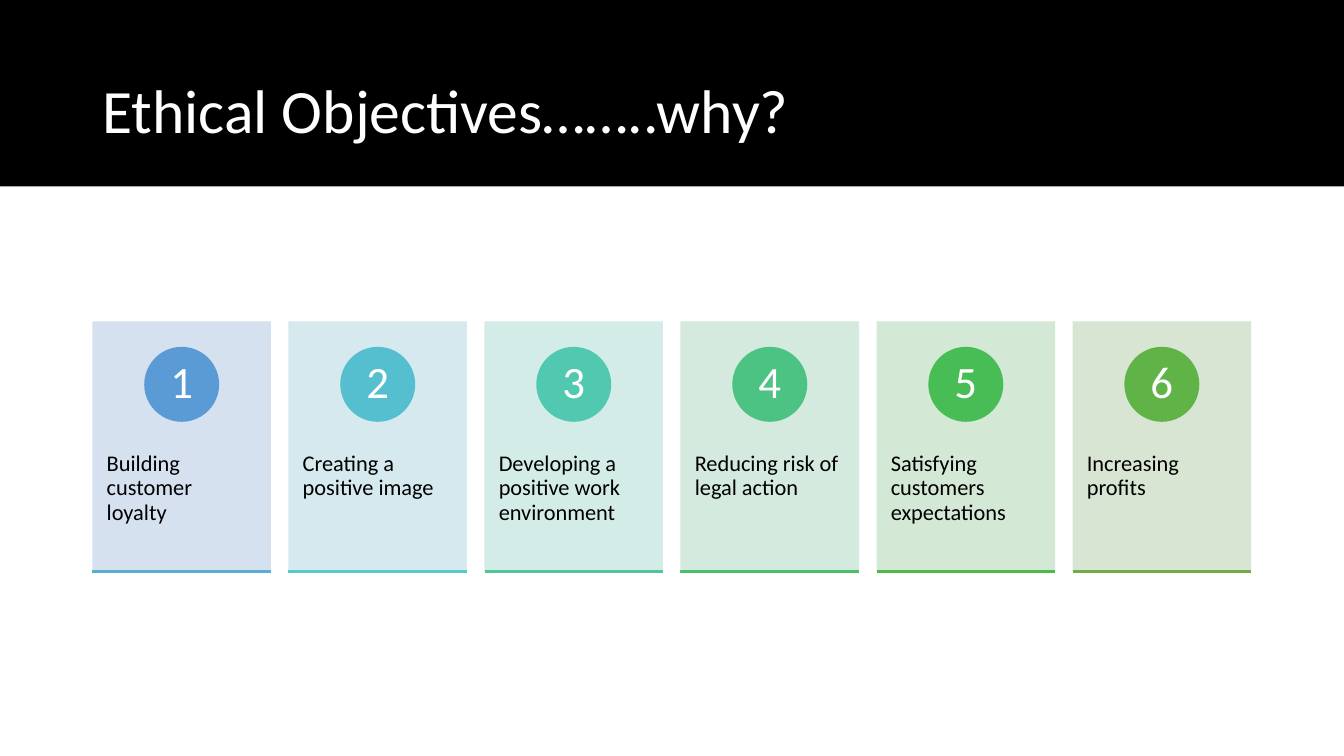
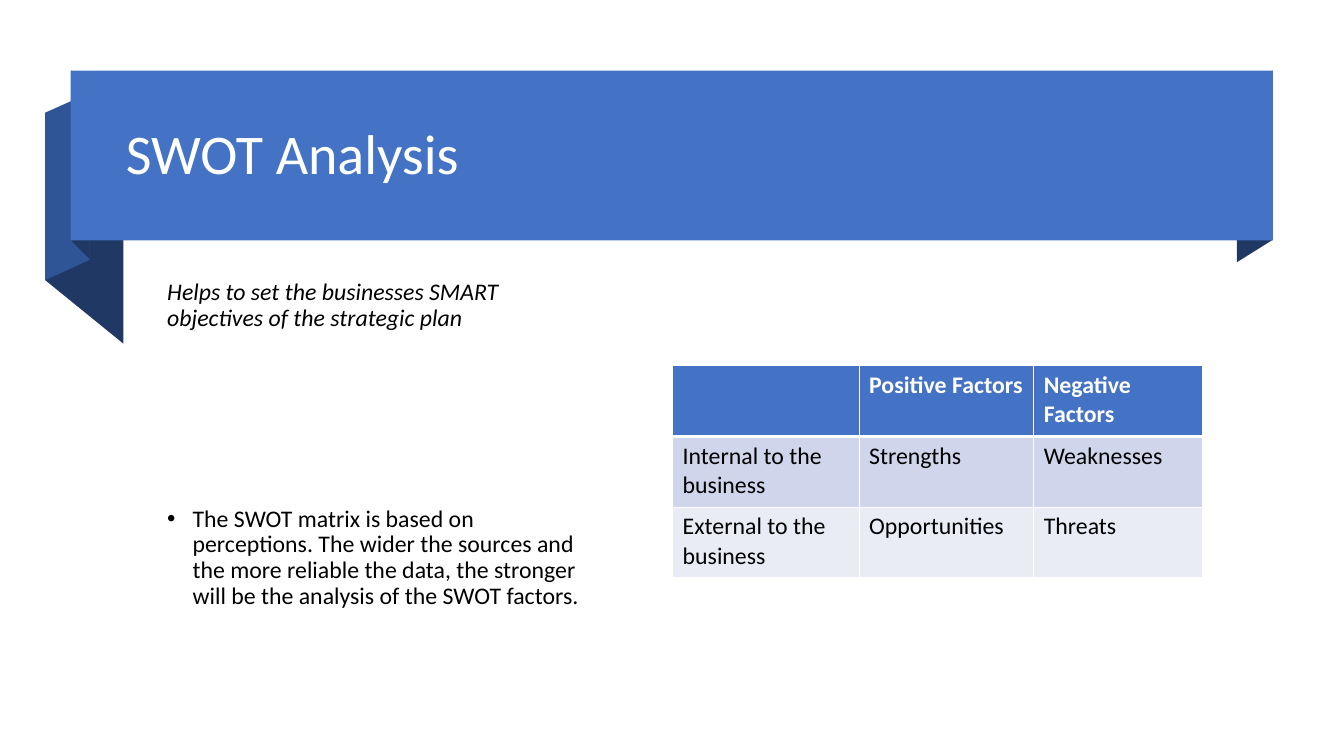
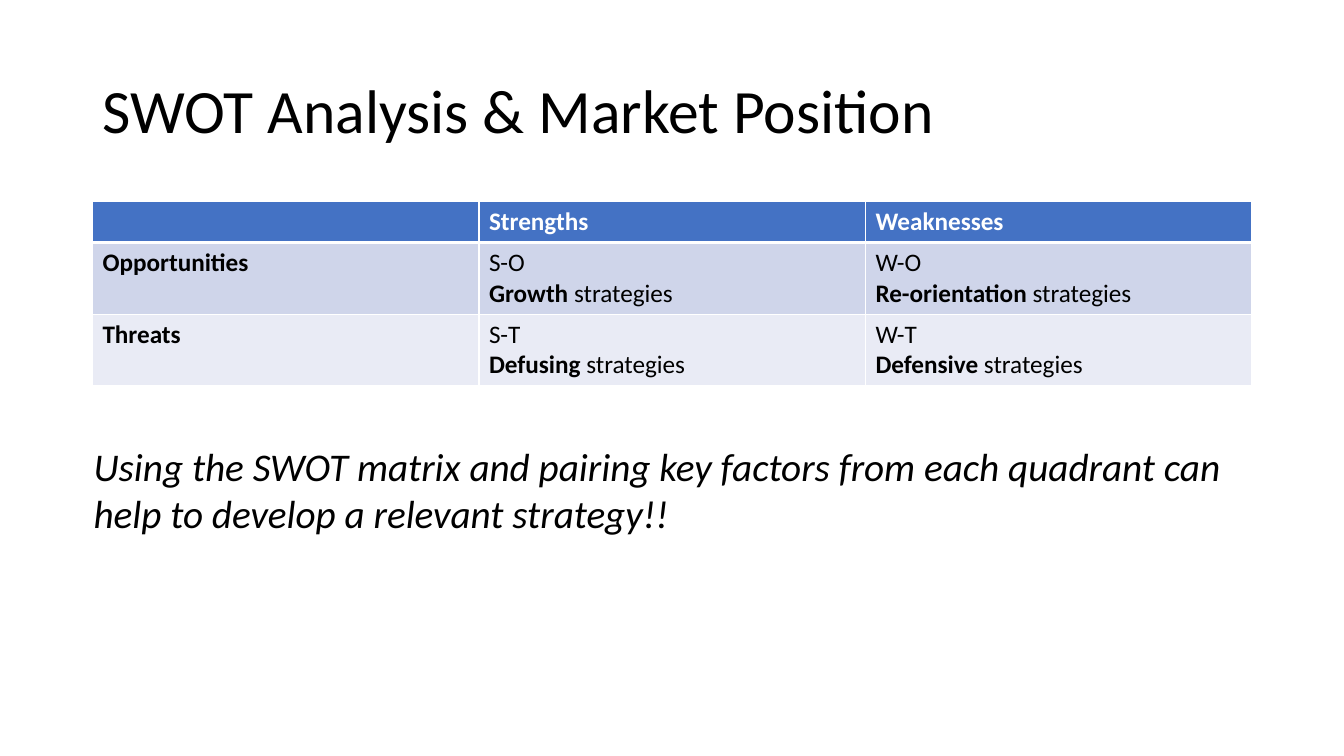
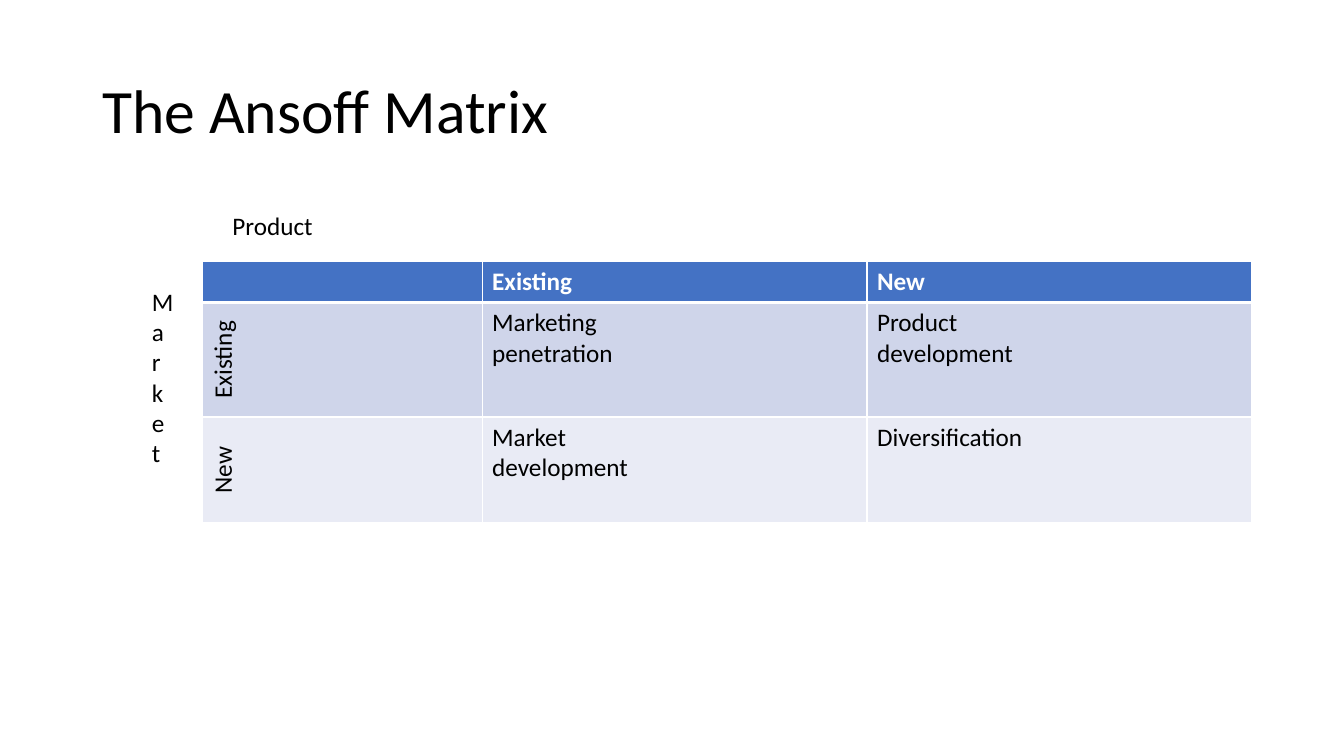
from pptx import Presentation
from pptx.dml.color import RGBColor
from pptx.enum.shapes import MSO_CONNECTOR, MSO_SHAPE
from pptx.enum.text import MSO_ANCHOR, MSO_AUTO_SIZE, PP_ALIGN
from pptx.oxml.ns import qn
from pptx.util import Cm, Pt
from lxml import etree

RECT, OVAL = MSO_SHAPE.RECTANGLE, MSO_SHAPE.OVAL
LINE = MSO_CONNECTOR.STRAIGHT
TOP, MIDDLE = MSO_ANCHOR.TOP, MSO_ANCHOR.MIDDLE
LEFT, CENTER = PP_ALIGN.LEFT, PP_ALIGN.CENTER
FIXED = MSO_AUTO_SIZE.NONE

BLACK = RGBColor(0x00, 0x00, 0x00)
WHITE = RGBColor(0xFF, 0xFF, 0xFF)
BLUE = RGBColor(0x44, 0x72, 0xC4)
NAVY = RGBColor(0x20, 0x38, 0x64)
STEEL = RGBColor(0x2F, 0x55, 0x97)
BANDS = [BLUE, RGBColor(0xCF, 0xD5, 0xEA), RGBColor(0xE9, 0xEB, 0xF5)]


def write(frame, text, size, color=BLACK, align=LEFT, anchor=TOP, gap=1.0, **extra):
    """Fill a text frame: a line break starts a paragraph, *stars* make bold."""
    frame.word_wrap = True
    frame.vertical_anchor = anchor
    for row, line in enumerate(text.split("\n")):
        par = frame.add_paragraph() if row else frame.paragraphs[0]
        par.alignment, par.line_spacing = align, gap
        for part, words in enumerate(line.split("*")):
            if not words:
                continue
            run = par.add_run()
            run.text = words
            form = {"name": "Calibri", "size": Pt(size), "bold": part % 2 == 1, **extra}
            for key, value in form.items():
                setattr(run.font, key, value)
            run.font.color.rgb = color


def paint(shape, color):
    shape.shadow.inherit = False
    shape.fill.solid()
    shape.fill.fore_color.rgb = color
    shape.line.fill.background()


deck = Presentation()
deck.slide_width, deck.slide_height = Cm(33.87), Cm(19.05)

# Pages and their titles
WIDE = (2.33, 1.01, 29.21, 3.68)
heads = [
    (5, "Ethical Objectives……..why?", WIDE, 44, WHITE),
    (1, "SWOT Analysis", (2.92, 2.11, 28.63, 3.68), 40, WHITE),
    (5, "SWOT Analysis & Market Position", WIDE, 44, BLACK),
    (5, "The Ansoff Matrix", WIDE, 44, BLACK),
]
pages = []
for layout, text, spot, size, color in heads:
    page = deck.slides.add_slide(deck.slide_layouts[layout])
    title = page.shapes.title
    title.left, title.top, title.width, title.height = map(Cm, spot)
    title.text_frame.auto_size = FIXED
    write(title.text_frame, text, size, color, anchor=MIDDLE, gap=0.9)
    pages.append(page)
ethics, swot, market, ansoff = pages

# Ethical objectives: black band and numbered cards
band = ethics.shapes.add_shape(RECT, 0, 0, deck.slide_width, Cm(4.7))
paint(band, BLACK)
ethics.shapes._spTree.append(ethics.shapes.title._element)

cards = [
    ("Building customer loyalty", "D2DEEF", "5B9BD5", "58ADD2"),
    ("Creating a positive image", "D1E7ED", "56BFCF", "53CCC8"),
    ("Developing a positive work environment", "D0EBE6", "51C9B0", "4FC699"),
    ("Reducing risk of legal action", "D0E8DB", "4CC382", "4AC06B"),
    ("Satisfying customers expectations", "CFE6D1", "48BC55", "4DB946"),
    ("Increasing profits", "D5E3CF", "60B347", "70AD47"),
]
WIDTH, STEP, HIGH, LOW, DISC = 4.5, 4.94, 8.1, 14.4, 1.89
for index, (text, *tones) in enumerate(cards):
    pale, full, edge = map(RGBColor.from_string, tones)
    left = WIDE[0] + index * STEP
    card = ethics.shapes.add_shape(RECT, Cm(left), Cm(HIGH), Cm(WIDTH), Cm(LOW - HIGH))
    paint(card, pale)
    tint = card._element.spPr.find(qn("a:solidFill"))[0]
    etree.SubElement(tint, qn("a:alpha"), val="90000")
    frame = card.text_frame
    frame.margin_left = frame.margin_right = Cm(0.36)
    frame.margin_top = Cm(3.3)
    write(frame, text, 16, gap=0.9)

    disc = ethics.shapes.add_shape(
        OVAL, Cm(left + (WIDTH - DISC) / 2), Cm(8.74), Cm(DISC), Cm(DISC))
    paint(disc, full)
    frame = disc.text_frame
    frame.margin_left = frame.margin_right = frame.margin_top = frame.margin_bottom = 0
    write(frame, str(index + 1), 32, WHITE, CENTER, MIDDLE, 0.9)

    rule = ethics.shapes.add_connector(LINE, Cm(left), Cm(LOW), Cm(left + WIDTH), Cm(LOW))
    rule.line.color.rgb = edge
    rule.line.width = Pt(1.5)
    etree.SubElement(rule._element.spPr, qn("a:effectLst"))

# SWOT analysis: folded ribbon
folds = [
    (NAVY, [(32.08, 6.04), (31.17, 6.61), (31.17, 2.31), (32.08, 1.78)]),
    (NAVY, [(3.11, 8.66), (1.14, 7.06), (1.14, 2.84), (3.11, 4.44)]),
    (STEEL, [(2.26, 6.55), (1.14, 7.06), (1.14, 2.84), (2.26, 2.34)]),
    (NAVY, [(2.26, 6.53), (1.8, 6.07), (1.8, 1.78), (2.26, 2.26)]),
]
for color, points in folds:
    start, *rest = [(Cm(x), Cm(y)) for x, y in points]
    pen = swot.shapes.build_freeform(*start)
    pen.add_line_segments(rest, close=True)
    paint(pen.convert_to_shape(), color)
front = swot.shapes.add_shape(RECT, Cm(1.78), Cm(1.78), Cm(30.3), Cm(4.28))
paint(front, BLUE)
swot.shapes._spTree.append(swot.shapes.title._element)

body = swot.placeholders[1]
body.left, body.top, body.width, body.height = Cm(3.96), Cm(6.93), Cm(11.25), Cm(9.9)
body.text_frame.auto_size = FIXED
write(body.text_frame,
      "Helps to set the businesses SMART objectives of the strategic plan\n"
      "The SWOT matrix is based on perceptions. The wider the sources and the more "
      "reliable the data, the stronger will be the analysis of the SWOT factors.",
      17, gap=0.9)
lead, point = body.text_frame.paragraphs
lead.runs[0].font.italic = True
lead.space_before, point.space_before = Pt(0), Pt(125)
for par, indent, bullet in ((lead, 0, "a:buNone"), (point, Cm(0.64), "a:buChar")):
    props = par._p.get_or_add_pPr()
    props.set("marL", str(indent))
    props.set("indent", str(-indent))
    mark = etree.SubElement(props, qn(bullet))
    if indent:
        mark.set("char", "•")

# Tables: page, left and top, columns, rows, text size, cells
tables = [
    (swot, (16.95, 9.22), (4.7, 4.4, 4.27), (1.78, 1.78, 1.78), 17, [
        ["", "*Positive Factors*", "*Negative Factors*"],
        ["Internal to the business", "Strengths", "Weaknesses"],
        ["External to the business", "Opportunities", "Threats"]]),
    (market, (2.33, 5.08), (9.74, 9.74, 9.74), (1.03, 1.8, 1.8), 18, [
        ["", "*Strengths*", "*Weaknesses*"],
        ["*Opportunities*", "S-O\n*Growth* strategies", "W-O\n*Re-orientation* strategies"],
        ["*Threats*", "S-T\n*Defusing* strategies", "W-T\n*Defensive* strategies"]]),
    (ansoff, (5.11, 6.59), (7.04, 9.7, 9.7), (1.03, 2.89, 2.66), 18, [
        ["", "*Existing*", "*New*"],
        ["Existing", "Marketing\npenetration", "Product\ndevelopment"],
        ["New", "Market\ndevelopment", "Diversification"]]),
]
for page, (left, top), cols, rows, size, cells in tables:
    grid = page.shapes.add_table(len(rows), len(cols), Cm(left), Cm(top),
                                 Cm(sum(cols)), Cm(sum(rows))).table
    for col, width in enumerate(cols):
        grid.columns[col].width = Cm(width)
    for row, height in enumerate(rows):
        grid.rows[row].height = Cm(height)
        for col, text in enumerate(cells[row]):
            cell = grid.cell(row, col)
            cell.fill.solid()
            cell.fill.fore_color.rgb = BANDS[row]
            props = cell._tc.get_or_add_tcPr()
            for place, side in enumerate("LRTB"):
                thick = (row, side) in ((0, "B"), (1, "T"))
                edge = etree.Element(qn("a:ln" + side), w=str(Pt(3 if thick else 1)))
                paper = etree.SubElement(edge, qn("a:solidFill"))
                etree.SubElement(paper, qn("a:srgbClr"), val=str(WHITE))
                props.insert(place, edge)
            turned = page is ansoff and row > 0 and col == 0
            if turned:
                props.set("vert", "vert270")
            write(cell.text_frame, text, size, BLACK if row else WHITE,
                  CENTER if turned else LEFT)

# Free text around the tables
notes = [
    (market, (2.11, 11.02, 29.21, 2.65), 28, True,
     "Using the SWOT matrix and pairing key factors from each quadrant can help to "
     "develop a relevant strategy!!"),
    (ansoff, (3.58, 7.09, 1.12, 4.88), 18, False, "\n".join("Market")),
    (ansoff, (5.61, 5.18, 10.49, 1.03), 18, False, "Product"),
]
for page, spot, size, italic, text in notes:
    box = page.shapes.add_textbox(*map(Cm, spot))
    write(box.text_frame, text, size, italic=italic)

deck.save("out.pptx")
